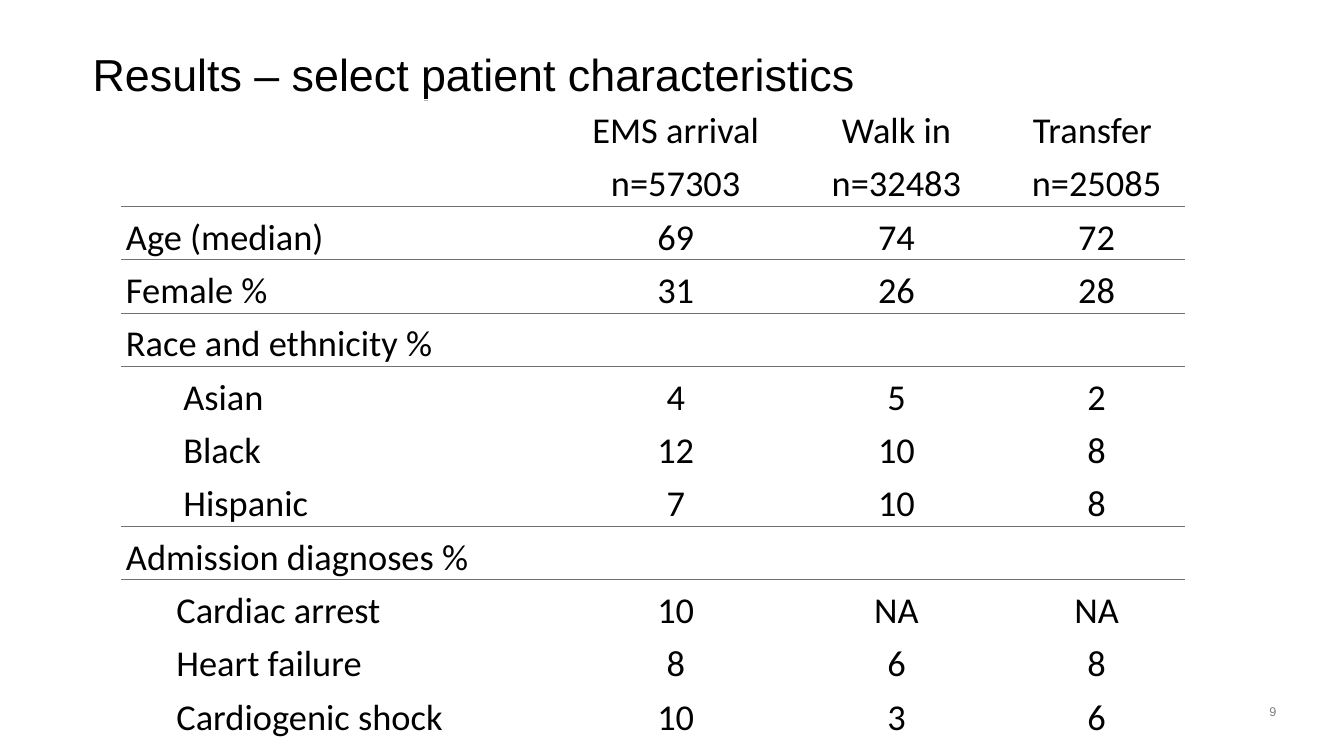
from lxml import etree
from pptx import Presentation
from pptx.dml.color import RGBColor
from pptx.enum.text import MSO_ANCHOR, PP_ALIGN
from pptx.oxml.ns import qn
from pptx.util import Pt

LEFT, CENTER = PP_ALIGN.LEFT, PP_ALIGN.CENTER
TOP, MIDDLE = MSO_ANCHOR.TOP, MSO_ANCHOR.MIDDLE

COLORS = {"text": "000000", "rule": "767171", "number": "808080"}

TITLE = "Results – select patient characteristics"
PAGE = "9"
HEADER = ("", "EMS arrival\nn=57303", "Walk in\nn=32483", "Transfer \nn=25085")
# label, indent, values, rule below
ROWS = [
    ("Age (median)", 0, ("69", "74", "72"), True),
    ("Female %", 0, ("31", "26", "28"), True),
    ("Race and ethnicity %", 0, ("", "", ""), True),
    ("Asian", 41, ("4", "5", "2"), False),
    ("Black", 41, ("12", "10", "8"), False),
    ("Hispanic", 41, ("7", "10", "8"), True),
    ("Admission diagnoses %", 0, ("", "", ""), True),
    ("Cardiac arrest", 36, ("10", "NA", "NA"), False),
    ("Heart failure", 36, ("8", "6", "8"), False),
    ("Cardiogenic shock", 36, ("10", "3", "6"), False),
]
COL_WIDTHS = (318.2, 154.8, 160.6, 125.3)
TABLE_LEFT, TABLE_TOP, ROW_HEIGHT = 87.1, 71.3, 38.1


def style(p, size, font, color, align=LEFT, spacing=1.0):
    p.alignment = align
    p.line_spacing = spacing
    p.font.size = Pt(size)
    p.font.name = font
    p.font.color.rgb = RGBColor.from_string(COLORS[color])


def add_text(s, box, text, size, color, align, anchor):
    tf = s.shapes.add_textbox(*(Pt(v) for v in box)).text_frame
    tf.margin_left = tf.margin_right = tf.margin_top = tf.margin_bottom = 0
    tf.word_wrap = True
    tf.vertical_anchor = anchor
    tf.text = text
    style(tf.paragraphs[0], size, "Arial", color, align, 0.9)


def add_border(cell, side):
    """Draw a thin rule on one side: lnT for the top, lnB for the bottom."""
    tc_pr = cell._tc.get_or_add_tcPr()
    ln = etree.SubElement(tc_pr, qn(f"a:{side}"), w=str(Pt(1)))
    fill = etree.SubElement(ln, qn("a:solidFill"))
    etree.SubElement(fill, qn("a:srgbClr"), val=COLORS["rule"])


def fill_cell(cell, text, align, anchor, indent, rule_above, rule_below):
    cell.margin_left = cell.margin_right = Pt(2.9)
    cell.margin_top = cell.margin_bottom = 0
    cell.vertical_anchor = anchor
    if rule_above:
        add_border(cell, "lnT")
    if rule_below:
        add_border(cell, "lnB")
    cell.fill.background()
    cell.text = text
    for p in cell.text_frame.paragraphs:
        if indent:
            p._p.get_or_add_pPr().set("marL", str(Pt(indent)))
        style(p, 26, "Calibri", "text", align, 1.2)


def add_results_table(s):
    heights = [2 * ROW_HEIGHT] + [ROW_HEIGHT] * len(ROWS)
    table = s.shapes.add_table(
        len(heights), len(COL_WIDTHS), Pt(TABLE_LEFT), Pt(TABLE_TOP),
        Pt(sum(COL_WIDTHS)), Pt(sum(heights))).table
    table.first_row = table.horz_banding = False
    for column, width in zip(table.columns, COL_WIDTHS):
        column.width = Pt(width)
    for row, height in zip(table.rows, heights):
        row.height = Pt(height)

    rule_above = False
    grid = [(HEADER[0], 0, HEADER[1:], True)] + ROWS
    for i, (label, indent, values, rule_below) in enumerate(grid):
        fill_cell(table.cell(i, 0), label, LEFT, TOP, indent, rule_above, rule_below)
        anchor = MIDDLE if i else TOP
        for j, value in enumerate(values, 1):
            fill_cell(table.cell(i, j), value, CENTER, anchor, 0, rule_above, rule_below)
        rule_above = rule_below


def main():
    prs = Presentation()
    prs.slide_width, prs.slide_height = Pt(960), Pt(540)
    s = prs.slides.add_slide(prs.slide_layouts[6])
    add_text(s, (66.2, 28.8, 828, 51.8), TITLE, 32, "text", LEFT, MIDDLE)
    add_results_table(s)
    add_text(s, (894.2, 504, 30.2, 11.5), PAGE, 9, "number", CENTER, TOP)
    prs.save("out.pptx")


if __name__ == "__main__":
    main()
